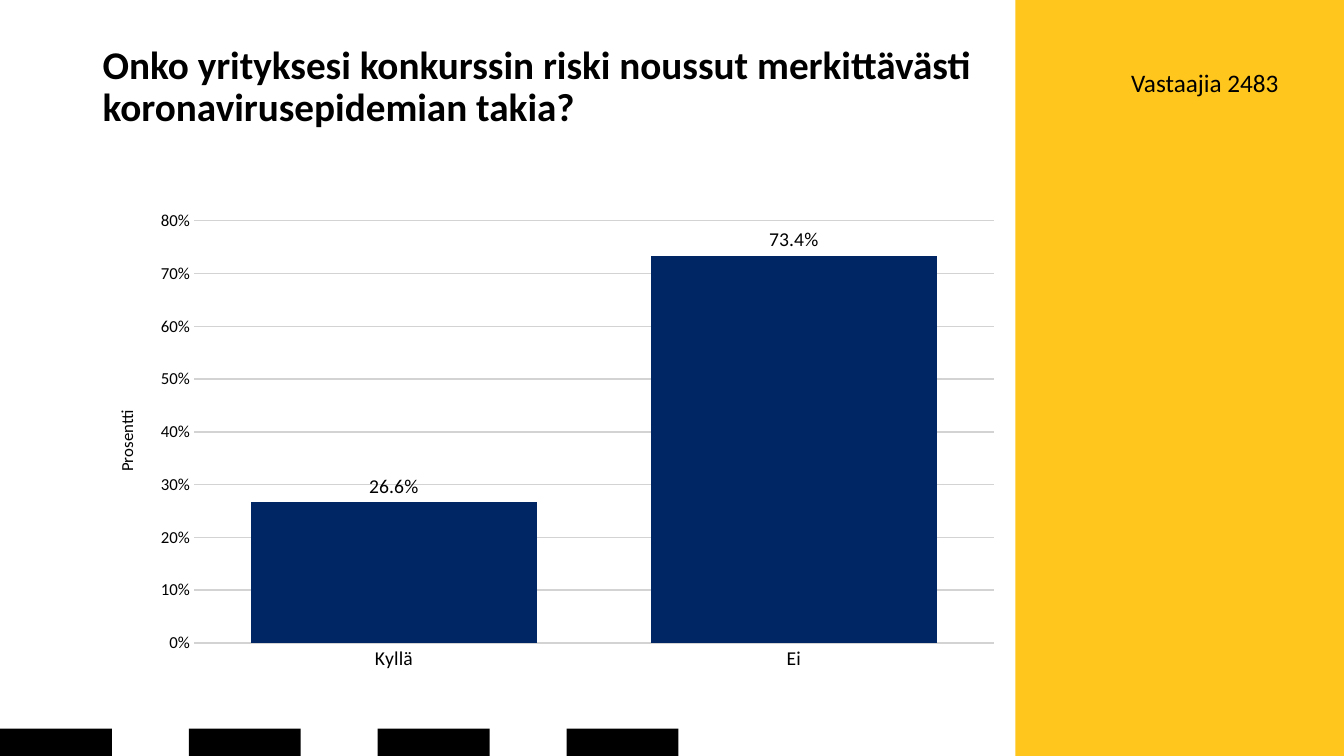
from dataclasses import dataclass

from lxml import etree
from pptx import Presentation
from pptx import util as u
from pptx.chart import data as chart_data
from pptx.dml.color import RGBColor
from pptx.enum import chart as ch
from pptx.enum import shapes, text
from pptx.oxml.ns import qn


@dataclass(frozen=True)
class Theme:
    font: str = "Calibri"
    black: str = "000000"
    yellow: str = "FFC61E"
    navy: str = "002663"
    grid: str = "D3D3D3"
    title_size: int = 28
    note_size: int = 18
    label_size: int = 14
    axis_size: int = 12


@dataclass(frozen=True)
class Box:
    left: float
    top: float
    width: float
    height: float

    def emu(self) -> list[int]:
        return [u.Inches(n) for n in (self.left, self.top, self.width, self.height)]


@dataclass(frozen=True)
class Block:
    box: Box
    color: str


THEME = Theme()
SIDE_PANEL = Block(Box(10.07, 0, 3.27, 7.5), THEME.yellow)
FOOTER_BLOCKS = [Block(Box(1.873 * i, 7.23, 1.11, 0.27), THEME.black) for i in range(4)]
RISK_SHARES = {"Kyllä": 0.266, "Ei": 0.734}


def draw_block(slide, block: Block) -> None:
    rect = slide.shapes.add_shape(shapes.MSO_SHAPE.RECTANGLE, *block.box.emu())
    rect.shadow.inherit = False
    rect.fill.solid()
    rect.fill.fore_color.rgb = RGBColor.from_string(block.color)
    rect.line.fill.background()


def style_font(font, size: int, bold: bool = False) -> None:
    font.name = THEME.font
    font.size = u.Pt(size)
    font.bold = bold
    font.color.rgb = RGBColor.from_string(THEME.black)


def add_text(slide, words: str, box: Box, *, size: int, bold: bool = False,
             align=text.PP_ALIGN.LEFT, anchor=text.MSO_ANCHOR.TOP,
             spacing: float = 1.0) -> None:
    frame = slide.shapes.add_textbox(*box.emu()).text_frame
    frame.word_wrap = True
    frame.vertical_anchor = anchor
    paragraph = frame.paragraphs[0]
    paragraph.alignment = align
    paragraph.line_spacing = spacing
    run = paragraph.add_run()
    run.text = words
    style_font(run.font, size, bold)


def place_plot(chart, box: Box) -> None:
    """Fix the inner plot area, in fractions of the chart."""
    plot_area = chart._chartSpace.chart.plotArea
    for old in plot_area.findall(qn("c:layout")):
        plot_area.remove(old)
    layout = etree.Element(qn("c:layout"))
    manual = etree.SubElement(layout, qn("c:manualLayout"))
    settings = {"layoutTarget": "inner", "xMode": "edge", "yMode": "edge",
                "x": box.left, "y": box.top, "w": box.width, "h": box.height}
    for tag, value in settings.items():
        etree.SubElement(manual, qn(f"c:{tag}")).set("val", str(value))
    plot_area.insert(0, layout)


def add_risk_chart(slide, box: Box) -> None:
    shares = chart_data.CategoryChartData(number_format="0.0%")
    shares.categories = list(RISK_SHARES)
    shares.add_series("Series 1", list(RISK_SHARES.values()))
    chart = slide.shapes.add_chart(
        ch.XL_CHART_TYPE.COLUMN_CLUSTERED, *box.emu(), shares).chart
    chart.has_legend = False
    chart.has_title = False
    style_font(chart.font, THEME.axis_size)
    place_plot(chart, Box(0.11, 0.04, 0.87, 0.88))

    # Columns and their labels
    plot = chart.plots[0]
    plot.gap_width = 40
    plot.vary_by_categories = False
    columns = plot.series[0]
    columns.format.fill.solid()
    columns.format.fill.fore_color.rgb = RGBColor.from_string(THEME.navy)
    labels = columns.data_labels
    labels.show_value = True
    labels.position = ch.XL_LABEL_POSITION.OUTSIDE_END
    labels.number_format = "0.0%"
    labels.number_format_is_linked = False
    style_font(labels.font, THEME.label_size)

    # Axes
    answers, percent = chart.category_axis, chart.value_axis
    for axis, size in ((answers, THEME.label_size), (percent, THEME.axis_size)):
        axis.major_tick_mark = ch.XL_TICK_MARK.INSIDE
        axis.format.line.fill.background()
        style_font(axis.tick_labels.font, size)
    percent.minimum_scale, percent.maximum_scale = 0, 0.8
    percent.major_unit = 0.1
    percent.tick_labels.number_format = "0%"
    percent.tick_labels.number_format_is_linked = False
    grid = percent.major_gridlines.format.line
    grid.color.rgb = RGBColor.from_string(THEME.grid)
    grid.width = u.Pt(1)
    axis_title = percent.axis_title.text_frame
    axis_title.text = "Prosentti"
    style_font(axis_title.paragraphs[0].runs[0].font, THEME.axis_size)


def main() -> None:
    deck = Presentation()
    deck.slide_width, deck.slide_height = u.Inches(13.33), u.Inches(7.5)
    slide = deck.slides.add_slide(deck.slide_layouts[6])

    # Side panel and footer pattern
    for block in (SIDE_PANEL, *FOOTER_BLOCKS):
        draw_block(slide, block)

    # Question and number of respondents
    add_text(slide, "Onko yrityksesi konkurssin riski noussut merkittävästi "
             "koronavirusepidemian takia?", Box(0.92, 0.4, 9.12, 0.94),
             size=THEME.title_size, bold=True, anchor=text.MSO_ANCHOR.MIDDLE,
             spacing=0.9)
    add_text(slide, "Vastaajia 2483", Box(10.71, 0.62, 2.07, 0.4),
             size=THEME.note_size, align=text.PP_ALIGN.RIGHT)

    # Answers
    add_risk_chart(slide, Box(0.92, 2, 9.12, 4.76))
    deck.save("out.pptx")


if __name__ == "__main__":
    main()
